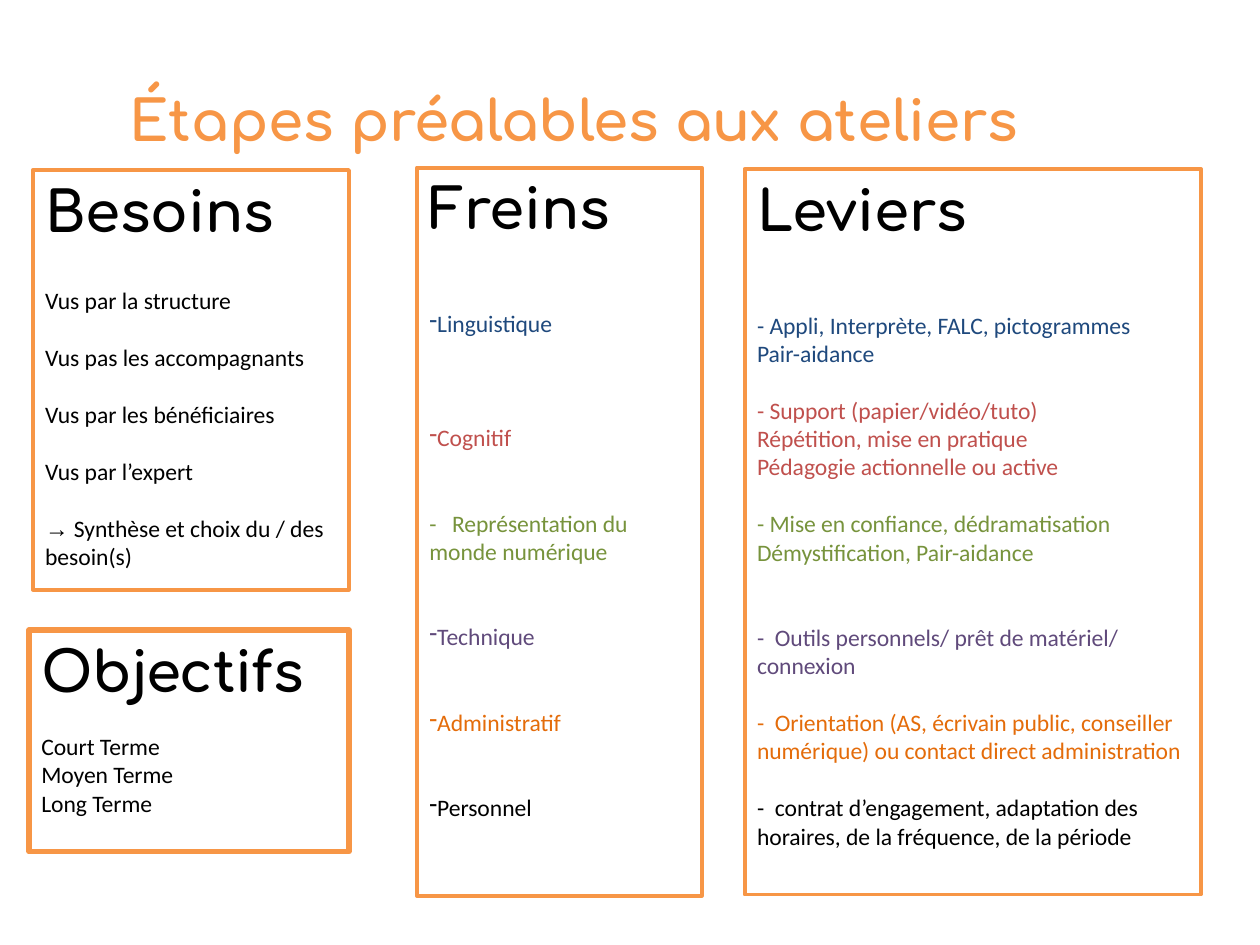
from lxml import etree
from pptx import Presentation
from pptx.dml.color import RGBColor
from pptx.enum.shapes import MSO_SHAPE
from pptx.enum.text import MSO_ANCHOR, MSO_AUTO_SIZE, PP_ALIGN
from pptx.oxml.ns import qn
from pptx.util import Inches, Pt

RECTANGLE = MSO_SHAPE.RECTANGLE
TOP = MSO_ANCHOR.TOP
LEFT = PP_ALIGN.LEFT
NO_AUTOFIT = MSO_AUTO_SIZE.NONE

WHITE = RGBColor(0xFF, 0xFF, 0xFF)
BLACK = RGBColor(0x00, 0x00, 0x00)
ORANGE = RGBColor(0xF7, 0x96, 0x46)
BLUE = RGBColor(0x1F, 0x49, 0x7D)
RED = RGBColor(0xC0, 0x50, 0x4D)
GREEN = RGBColor(0x77, 0x93, 0x3C)
PURPLE = RGBColor(0x60, 0x4A, 0x7B)
DARK_ORANGE = RGBColor(0xE4, 0x6C, 0x0A)

HEADING = {"name": "Comfortaa", "size": Pt(32), "bold": True}
BODY = {"name": "Calibri", "size": Pt(13.5), "bold": False}
ARROW = {**BODY, "name": "Arial"}
LINE = 16.3  # height of one body line, in points


def add_span(para, text, style, color):
    span = para.add_run()
    span.text = text
    for name, value in style.items():
        setattr(span.font, name, value)
    span.font.color.rgb = color


def add_dash(para, color):
    """Give the paragraph a dash bullet that sits right before its text."""
    properties = para._p.get_or_add_pPr()
    properties.set("marL", "0")
    properties.set("indent", "0")
    bullet_color = etree.SubElement(properties, qn("a:buClr"))
    etree.SubElement(bullet_color, qn("a:srgbClr"), val=str(color))
    etree.SubElement(properties, qn("a:buChar"), char="-")


# Each item: text, colour, space before in points, dash bullet
PANELS = [
    ("Besoins", (0.26, 1.35, 2.51, 3.33), 2.25, [
        ("Vus par la structure", BLACK, 24.4, False),
        ("Vus pas les accompagnants", BLACK, LINE, False),
        ("Vus par les bénéficiaires", BLACK, LINE, False),
        ("Vus par l’expert", BLACK, LINE, False),
        ("→ Synthèse et choix du / des besoin(s)", BLACK, LINE, False),
    ]),
    ("Freins", (3.31, 1.33, 2.26, 5.78), 2.25, [
        ("Linguistique", BLUE, 39, True),
        ("Cognitif", RED, 3 * LINE, True),
        ("-\tReprésentation du monde numérique", GREEN, 2 * LINE, False),
        ("Technique", PURPLE, 2 * LINE, True),
        ("Administratif", DARK_ORANGE, 2 * LINE, True),
        ("Personnel", BLACK, 2 * LINE, True),
    ]),
    ("Objectifs", (0.23, 5, 2.54, 1.76), 3, [
        ("Court Terme", BLACK, LINE, False),
        ("Moyen Terme", BLACK, 0, False),
        ("Long Terme", BLACK, 0, False),
    ]),
    ("Leviers", (5.91, 1.34, 3.62, 5.76), 2.25, [
        ("- Appli, Interprète, FALC, pictogrammes", BLUE, 39, False),
        ("Pair-aidance", BLUE, 0, False),
        ("- Support (papier/vidéo/tuto)", RED, LINE, False),
        ("Répétition, mise en pratique", RED, 0, False),
        ("Pédagogie actionnelle ou active", RED, 0, False),
        ("- Mise en confiance, dédramatisation", GREEN, LINE, False),
        ("Démystification, Pair-aidance", GREEN, 0, False),
        ("-  Outils personnels/ prêt de matériel/ connexion", PURPLE, 2 * LINE, False),
        ("-  Orientation (AS, écrivain public, conseiller numérique) "
         "ou contact direct administration", DARK_ORANGE, LINE, False),
        ("-  contrat d’engagement, adaptation des horaires, "
         "de la fréquence, de la période", BLACK, LINE, False),
    ]),
]

deck = Presentation()
deck.slide_width, deck.slide_height = Inches(10), Inches(7.5)
page = deck.slides.add_slide(deck.slide_layouts[5])

title = page.shapes.title
title.left, title.top = Inches(0.93), Inches(0.63)
title.width, title.height = Inches(8.59), Inches(0.63)
title.text_frame.auto_size = NO_AUTOFIT
title.text_frame.vertical_anchor = TOP
title_para = title.text_frame.paragraphs[0]
title_para.alignment = LEFT
add_span(title_para, "Étapes préalables aux ateliers", HEADING, ORANGE)

for heading, place, border, items in PANELS:
    box = page.shapes.add_shape(RECTANGLE, *(Inches(length) for length in place))
    box.shadow.inherit = False
    box.fill.solid()
    box.fill.fore_color.rgb = WHITE
    box.line.color.rgb = ORANGE
    box.line.width = Pt(border)

    frame = box.text_frame
    frame.word_wrap = True
    frame.vertical_anchor = TOP
    heading_para = frame.paragraphs[0]
    heading_para.alignment = LEFT
    add_span(heading_para, heading, HEADING, BLACK)

    for text, color, space, dashed in items:
        para = frame.add_paragraph()
        para.alignment = LEFT
        para.space_before = Pt(space)
        if dashed:
            add_dash(para, color)
        if "\t" in text:
            tabs = etree.SubElement(para._p.get_or_add_pPr(), qn("a:tabLst"))
            etree.SubElement(tabs, qn("a:tab"), pos=str(Inches(0.18)), algn="l")
        if text.startswith("→"):
            add_span(para, "→", ARROW, color)
            text = text[1:]
        add_span(para, text, BODY, color)

deck.save("out.pptx")
